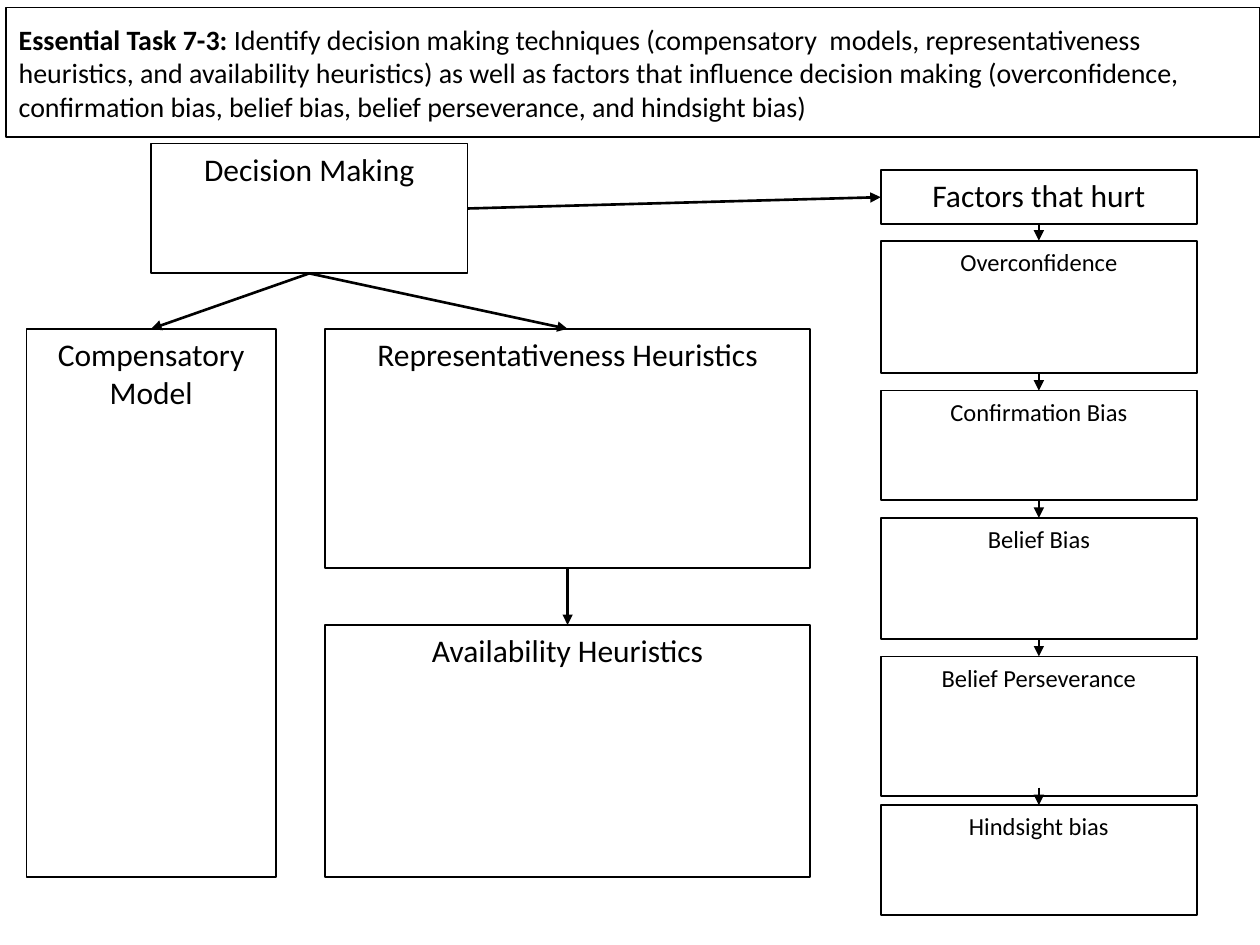
from dataclasses import dataclass

from lxml import etree
from pptx import Presentation
from pptx import util as u
from pptx.dml.color import RGBColor
from pptx.enum import shapes, text
from pptx.oxml.ns import qn


@dataclass(frozen=True)
class Theme:
    font: str = "Calibri"
    ink: RGBColor = RGBColor(0x00, 0x00, 0x00)
    paper: RGBColor = RGBColor(0xFF, 0xFF, 0xFF)
    heading: int = 18
    task: int = 16
    factor: int = 14
    border: float = 1
    arrow: float = 1.5


THEME = Theme()
TOP, LEFT, BOTTOM, RIGHT = range(4)  # connection sites of a rectangle


def add_box(s, x, y, w, h, runs, size, align=text.PP_ALIGN.CENTER,
            anchor=text.MSO_ANCHOR.TOP):
    """Outlined box; runs is a list of (wording, bold) pairs."""
    sp = s.shapes.add_shape(shapes.MSO_SHAPE.RECTANGLE,
                            *(u.Inches(v) for v in (x, y, w, h)))
    sp.shadow.inherit = False
    sp.fill.solid()
    sp.fill.fore_color.rgb = THEME.paper
    sp.line.color.rgb = THEME.ink
    sp.line.width = u.Pt(THEME.border)
    tf = sp.text_frame
    tf.word_wrap = True
    tf.vertical_anchor = anchor
    p = tf.paragraphs[0]
    p.alignment = align
    p.font.name = THEME.font
    p.font.size = u.Pt(size)
    p.font.color.rgb = THEME.ink
    for wording, bold in runs:
        r = p.add_run()
        r.text = wording
        r.font.bold = bold
    return sp


def site_point(sp, site):
    return {
        TOP: (sp.left + sp.width // 2, sp.top),
        LEFT: (sp.left, sp.top + sp.height // 2),
        BOTTOM: (sp.left + sp.width // 2, sp.top + sp.height),
        RIGHT: (sp.left + sp.width, sp.top + sp.height // 2),
    }[site]


def add_arrow(s, start, end_box, end_site):
    """Arrow from a point to a side of a box."""
    c = s.shapes.add_connector(shapes.MSO_CONNECTOR.STRAIGHT, *start,
                               *site_point(end_box, end_site))
    c.end_connect(end_box, end_site)
    c.line.color.rgb = THEME.ink
    c.line.width = u.Pt(THEME.arrow)
    etree.SubElement(c.line._get_or_add_ln(), qn("a:tailEnd"), type="triangle")
    etree.SubElement(c._element.spPr, qn("a:effectLst"))


def add_task(s, x, y, w, h):
    runs = [
        ("Essential Task 7-3: ", True),
        ("Identify decision making techniques (compensatory  models, "
         "representativeness heuristics, and availability heuristics) as well "
         "as factors that influence decision making (overconfidence, "
         "confirmation bias, belief bias, belief perseverance, and hindsight "
         "bias)", False),
    ]
    add_box(s, x, y, w, h, runs, THEME.task, text.PP_ALIGN.LEFT,
            text.MSO_ANCHOR.MIDDLE)


def add_techniques(s, x, y, w, h):
    """Decision making and its techniques; returns the root box."""
    def technique(label, left, top, width, height):
        return add_box(s, x + left, y + top, width, height,
                       [(label, False)], THEME.heading)

    top, heuristic_left, lower_top = 1.47, 2.37, 3.82
    heuristic_w = w - heuristic_left
    decision = technique("Decision Making", 0.99, 0, 2.51, 1.03)
    model = technique("Compensatory Model", 0, top, 1.98, h - top)
    represent = technique("Representativeness Heuristics",
                          heuristic_left, top, heuristic_w, 1.9)
    available = technique("Availability Heuristics",
                          heuristic_left, lower_top, heuristic_w, h - lower_top)
    for start, end in ((decision, model), (decision, represent),
                       (represent, available)):
        add_arrow(s, site_point(start, BOTTOM), end, TOP)
    return decision


def add_factors(s, x, y, w):
    """Column of harmful factors; returns its heading box."""
    heading = add_box(s, x, y, w, 0.43, [("Factors that hurt", False)],
                      THEME.heading)
    factors = [  # label, top, height
        ("Overconfidence", 0.56, 1.05),
        ("Confirmation Bias", 1.75, 0.87),
        ("Belief Bias", 2.76, 0.96),
        ("Belief Perseverance", 3.86, 1.11),
        ("Hindsight bias", 5.04, 0.87),
    ]
    for label, top, height in factors:
        factor = add_box(s, x, y + top, w, height, [(label, False)],
                         THEME.factor)
        end_x, end_y = site_point(factor, TOP)
        add_arrow(s, (end_x, end_y - u.Inches(0.14)), factor, TOP)
    return heading


def main():
    prs = Presentation()
    prs.slide_width, prs.slide_height = u.Inches(10), u.Inches(7.5)
    s = prs.slides.add_slide(prs.slide_layouts[6])

    # Task statement
    add_task(s, 0.05, 0.06, 9.95, 1.03)
    # Techniques on the left, factors on the right
    decision = add_techniques(s, 0.21, 1.14, 6.22, 5.82)
    factors = add_factors(s, 6.99, 1.35, 2.51)
    # Link between the two regions
    add_arrow(s, site_point(decision, RIGHT), factors, LEFT)

    prs.save("out.pptx")


if __name__ == "__main__":
    main()
